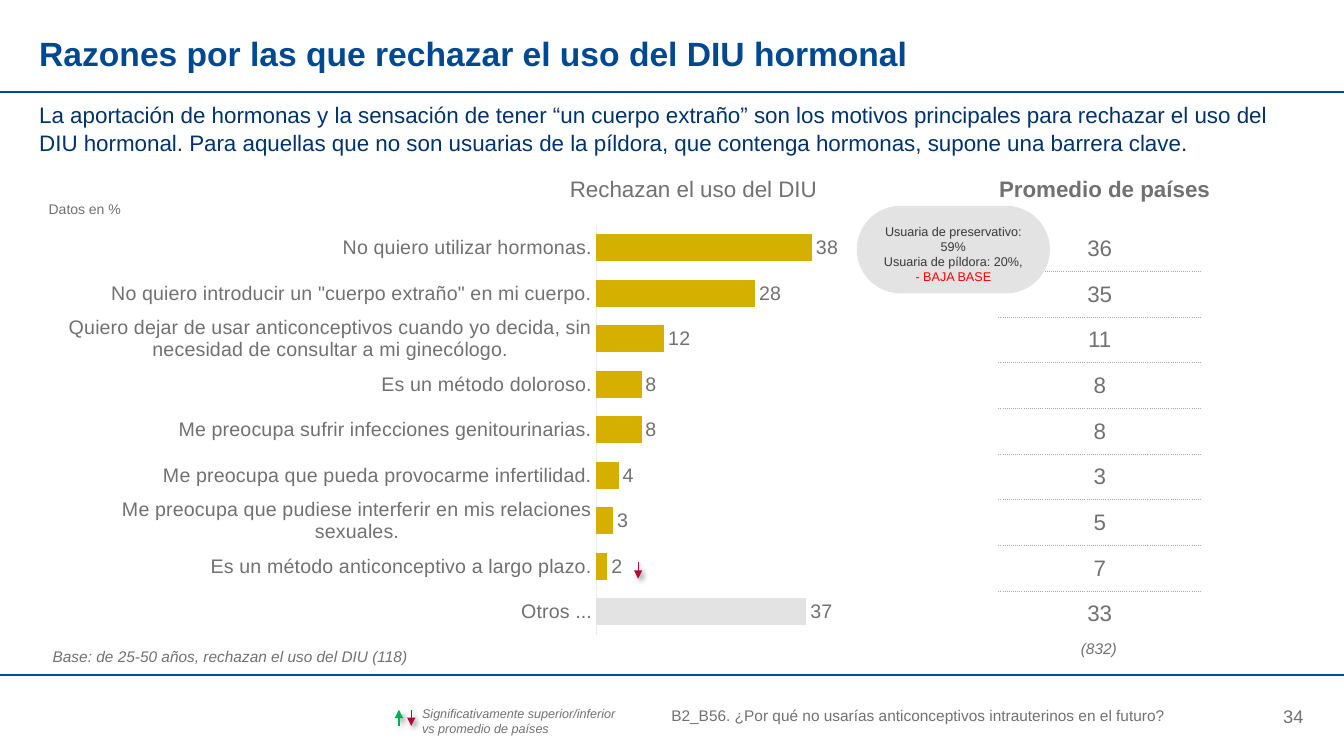
from lxml import etree
from pptx import Presentation
from pptx.chart.data import CategoryChartData
from pptx.dml.color import RGBColor
from pptx.enum.chart import XL_CHART_TYPE, XL_LABEL_POSITION, XL_TICK_MARK
from pptx.enum.shapes import MSO_CONNECTOR, MSO_SHAPE
from pptx.enum.text import MSO_ANCHOR, MSO_AUTO_SIZE, PP_ALIGN
from pptx.oxml import parse_xml
from pptx.oxml.ns import nsdecls, qn
from pptx.util import Pt

BLUE, TITLE_BLUE, BODY_BLUE = "004D96", "004990", "00336E"
GRAY, LIGHT_GRAY, AXIS_GRAY, DOT_GRAY = "717171", "E3E3E3", "EAEAEA", "AAAAAA"
GOLD, GREEN, CRIMSON, RED, DARK = "D5B000", "00B050", "B30838", "FF0000", "383838"

REASONS = [
    ("No quiero utilizar hormonas.", 38, 36),
    ('No quiero introducir un "cuerpo extraño" en mi cuerpo.', 28, 35),
    ("Quiero dejar de usar anticonceptivos cuando yo decida, sin "
     "necesidad de consultar a mi ginecólogo.", 12, 11),
    ("Es un método doloroso.", 8, 8),
    ("Me preocupa sufrir infecciones genitourinarias.", 8, 8),
    ("Me preocupa que pueda provocarme infertilidad.", 4, 3),
    ("Me preocupa que pudiese interferir en mis relaciones sexuales.", 3, 5),
    ("Es un método anticonceptivo a largo plazo.", 2, 7),
    ("Otros ...", 37, 33),
]


def color(value):
    return RGBColor.from_string(value)


class SlideBuilder:
    def __init__(self, slide, font_name="Arial"):
        self.slide = slide
        self.font_name = font_name

    def style_font(self, font, size, hex_color, bold=False, italic=False):
        font.name = self.font_name
        font.size = Pt(size)
        font.bold = bold
        font.italic = italic
        font.color.rgb = color(hex_color)

    def fill_frame(self, frame, text, size, hex_color, align=PP_ALIGN.LEFT,
                   anchor=MSO_ANCHOR.TOP, margin=0, spacing=1.0, **style):
        frame.text = text
        frame.word_wrap = True
        frame.auto_size = MSO_AUTO_SIZE.NONE
        frame.vertical_anchor = anchor
        frame.margin_left = frame.margin_right = Pt(margin)
        frame.margin_top = frame.margin_bottom = Pt(margin)
        for paragraph in frame.paragraphs:
            paragraph.alignment = align
            paragraph.space_before = Pt(0)
            paragraph.line_spacing = spacing
            for run in paragraph.runs:
                self.style_font(run.font, size, hex_color, **style)

    def placeholder(self, index, box, text, size, hex_color, **options):
        shape = self.slide.placeholders[index]
        shape.left, shape.top, shape.width, shape.height = map(Pt, box)
        self.fill_frame(shape.text_frame, text, size, hex_color, **options)
        for paragraph in shape.text_frame.paragraphs:
            properties = paragraph._p.get_or_add_pPr()
            properties.set("marL", "0")
            properties.set("indent", "0")
            etree.SubElement(properties, qn("a:buNone"))

    def text(self, box, text, size, hex_color=GRAY, **options):
        shape = self.slide.shapes.add_textbox(*map(Pt, box))
        self.fill_frame(shape.text_frame, text, size, hex_color, **options)

    def line(self, start, end, hex_color, width):
        connector = self.slide.shapes.add_connector(
            MSO_CONNECTOR.STRAIGHT, *map(Pt, start + end))
        connector.line.color.rgb = color(hex_color)
        connector.line.width = Pt(width)
        effects = etree.SubElement(connector._element.spPr, qn("a:effectLst"))
        return connector, effects

    def arrow(self, start, end, hex_color):
        connector, effects = self.line(start, end, hex_color, 0.75)
        etree.SubElement(connector.line._get_or_add_ln(), qn("a:tailEnd"), type="triangle")
        effects.append(parse_xml(
            f'<a:outerShdw {nsdecls("a")} blurRad="{Pt(4)}" dist="{Pt(3)}" dir="2700000">'
            '<a:srgbClr val="000000"><a:alpha val="40000"/></a:srgbClr></a:outerShdw>'))

    def bubble(self, box, text, size, fill, hex_color):
        shape = self.slide.shapes.add_shape(MSO_SHAPE.ROUNDED_RECTANGLE, *map(Pt, box))
        shape.adjustments[0] = 0.5
        shape.shadow.inherit = False
        shape.fill.solid()
        shape.fill.fore_color.rgb = color(fill)
        shape.line.fill.background()
        frame = shape.text_frame
        self.fill_frame(frame, text, size, hex_color, align=PP_ALIGN.CENTER, margin=3.6)
        frame.margin_left = frame.margin_right = Pt(7.2)
        return frame

    def cell_border(self, cell, side):
        properties = cell._tc.get_or_add_tcPr()
        border = parse_xml(
            f'<a:{side} {nsdecls("a")} w="{Pt(1)}"><a:solidFill><a:srgbClr val="{DOT_GRAY}"/>'
            f'</a:solidFill><a:prstDash val="sysDot"/></a:{side}>')
        position = len(properties.findall(qn("a:lnT")))
        properties.insert(position, border)

    def table(self, box, values, size):
        table = self.slide.shapes.add_table(len(values), 1, *map(Pt, box)).table
        table.first_row = table.horz_banding = False
        for row, value in enumerate(values):
            cell = table.cell(row, 0)
            cell.text = str(value)
            cell.vertical_anchor = MSO_ANCHOR.MIDDLE
            cell.fill.background()
            paragraph = cell.text_frame.paragraphs[0]
            paragraph.alignment = PP_ALIGN.CENTER
            self.style_font(paragraph.runs[0].font, size, GRAY)
            if row > 0:
                self.cell_border(cell, "lnT")
            if row < len(values) - 1:
                self.cell_border(cell, "lnB")

    def bar_chart(self, box, categories, values, size):
        data = CategoryChartData()
        data.categories = categories
        data.add_series("Series 1", values)
        chart = self.slide.shapes.add_chart(
            XL_CHART_TYPE.BAR_CLUSTERED, *map(Pt, box), data).chart
        chart.has_legend = chart.has_title = False
        self.style_font(chart.font, size, GRAY)

        category_axis, value_axis = chart.category_axis, chart.value_axis
        category_axis.reverse_order = True
        category_axis.major_tick_mark = category_axis.minor_tick_mark = XL_TICK_MARK.NONE
        category_axis.format.line.color.rgb = color(AXIS_GRAY)
        category_axis.format.line.width = Pt(0.75)
        value_axis.minimum_scale, value_axis.maximum_scale = 0, 70
        value_axis.has_major_gridlines = False
        value_axis.visible = False

        plot = chart.plots[0]
        plot.gap_width = 67
        plot.vary_by_categories = False
        plot.has_data_labels = True
        plot.data_labels.show_value = True
        plot.data_labels.position = XL_LABEL_POSITION.OUTSIDE_END
        self.style_font(plot.data_labels.font, size, GRAY)
        series = plot.series[0]
        for fill, hex_color in ((series.format.fill, GOLD),
                                (series.points[len(values) - 1].format.fill, LIGHT_GRAY)):
            fill.solid()
            fill.fore_color.rgb = color(hex_color)

        # Fixed inner plot area
        plot_area = chart._chartSpace.chart.plotArea
        for layout in plot_area.findall(qn("c:layout")):
            plot_area.remove(layout)
        plot_area.insert(0, parse_xml(
            f'<c:layout {nsdecls("c")}><c:manualLayout><c:layoutTarget val="inner"/>'
            '<c:xMode val="edge"/><c:yMode val="edge"/><c:x val="0.5"/><c:y val="0.035"/>'
            '<c:w val="0.37"/><c:h val="0.93"/></c:manualLayout></c:layout>'))


def main():
    presentation = Presentation()
    presentation.slide_width, presentation.slide_height = Pt(960), Pt(540)
    slide = presentation.slides.add_slide(presentation.slide_layouts[3])
    builder = SlideBuilder(slide)
    reasons, rejections, averages = zip(*REASONS)

    # Title, key message and question
    builder.placeholder(0, (28, 22, 903, 32), "Razones por las que rechazar el uso del DIU hormonal",
                        24, TITLE_BLUE, bold=True, anchor=MSO_ANCHOR.MIDDLE)
    builder.placeholder(1, (28, 71.3, 904, 40),
                        "La aportación de hormonas y la sensación de tener “un cuerpo extraño” son los "
                        "motivos principales para rechazar el uso del DIU hormonal. Para aquellas que no "
                        "son usuarias de la píldora, que contenga hormonas, supone una barrera clave.",
                        16, BODY_BLUE, spacing=1.05)
    builder.placeholder(2, (479.5, 503.3, 368, 16),
                        "B2_B56. ¿Por qué no usarías anticonceptivos intrauterinos en el futuro?",
                        11, GRAY, anchor=MSO_ANCHOR.MIDDLE)

    # Rules and slide number
    for top in (66, 482.4):
        builder.line((0, top), (960, top), BLUE, 1.5)
    builder.text((854.6, 503.3, 76.4, 16), "34", 13, align=PP_ALIGN.RIGHT, anchor=MSO_ANCHOR.MIDDLE)

    # Country averages and rejection chart
    builder.table((713.5, 161.3, 144, 293.8), averages, 16)
    heading = dict(align=PP_ALIGN.CENTER, anchor=MSO_ANCHOR.BOTTOM, margin=3.6)
    builder.text((702, 120.2, 174, 27.4), "Promedio de países", 16, bold=True, **heading)
    builder.text((399.3, 120.2, 192, 27.4), "Rechazan el uso del DIU", 16, **heading)
    builder.bar_chart((41.8, 149.8, 768, 314.6), reasons, rejections, 14)

    # Units and bases
    builder.text((27.4, 143.3, 66.2, 12.2), "Datos en %", 10, align=PP_ALIGN.CENTER)
    builder.text((29.5, 462.2, 270, 13.7), "Base: de 25-50 años, rechazan el uso del DIU (118)",
                 11, align=PP_ALIGN.CENTER, italic=True)
    builder.text((527.8, 456.5, 270, 13.7), "(832)", 11, align=PP_ALIGN.RIGHT, italic=True)

    # Significance arrows and their key
    builder.arrow((293.8, 507), (293.8, 518.5), CRIMSON)
    builder.arrow((285, 518.5), (285, 507), GREEN)
    builder.arrow((455.8, 401.8), (455.8, 413.3), CRIMSON)
    builder.text((301.5, 504, 144, 21.6),
                 "Significativamente superior/inferior vs promedio de países", 9, italic=True)

    # User profile bubble
    profile = builder.bubble((612, 147, 138, 62.6),
                             "Usuaria de preservativo: 59%\nUsuaria de píldora: 20%,\n- BAJA BASE",
                             9, LIGHT_GRAY, DARK)
    profile.paragraphs[-1].runs[0].font.color.rgb = color(RED)

    presentation.save("out.pptx")


if __name__ == "__main__":
    main()
